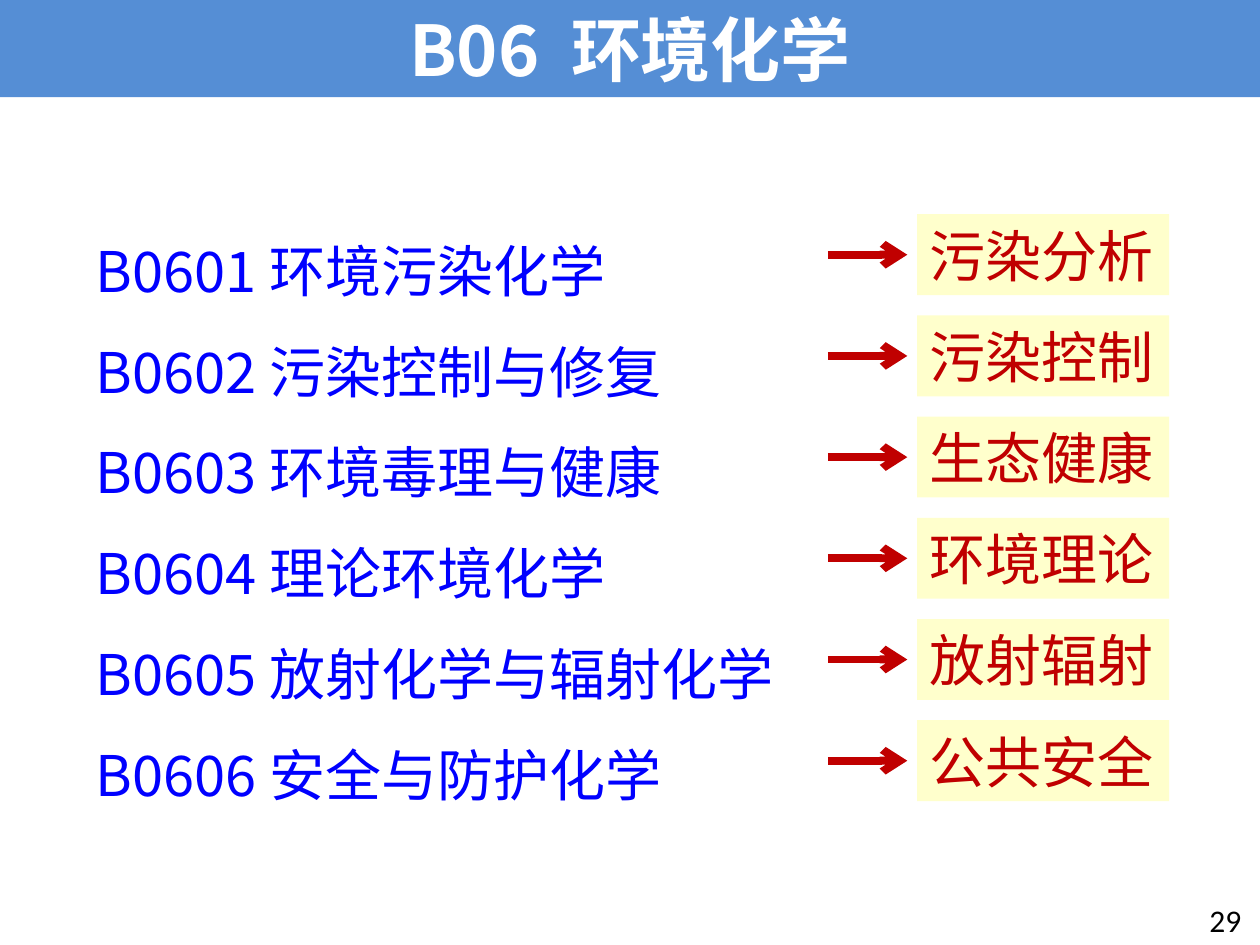
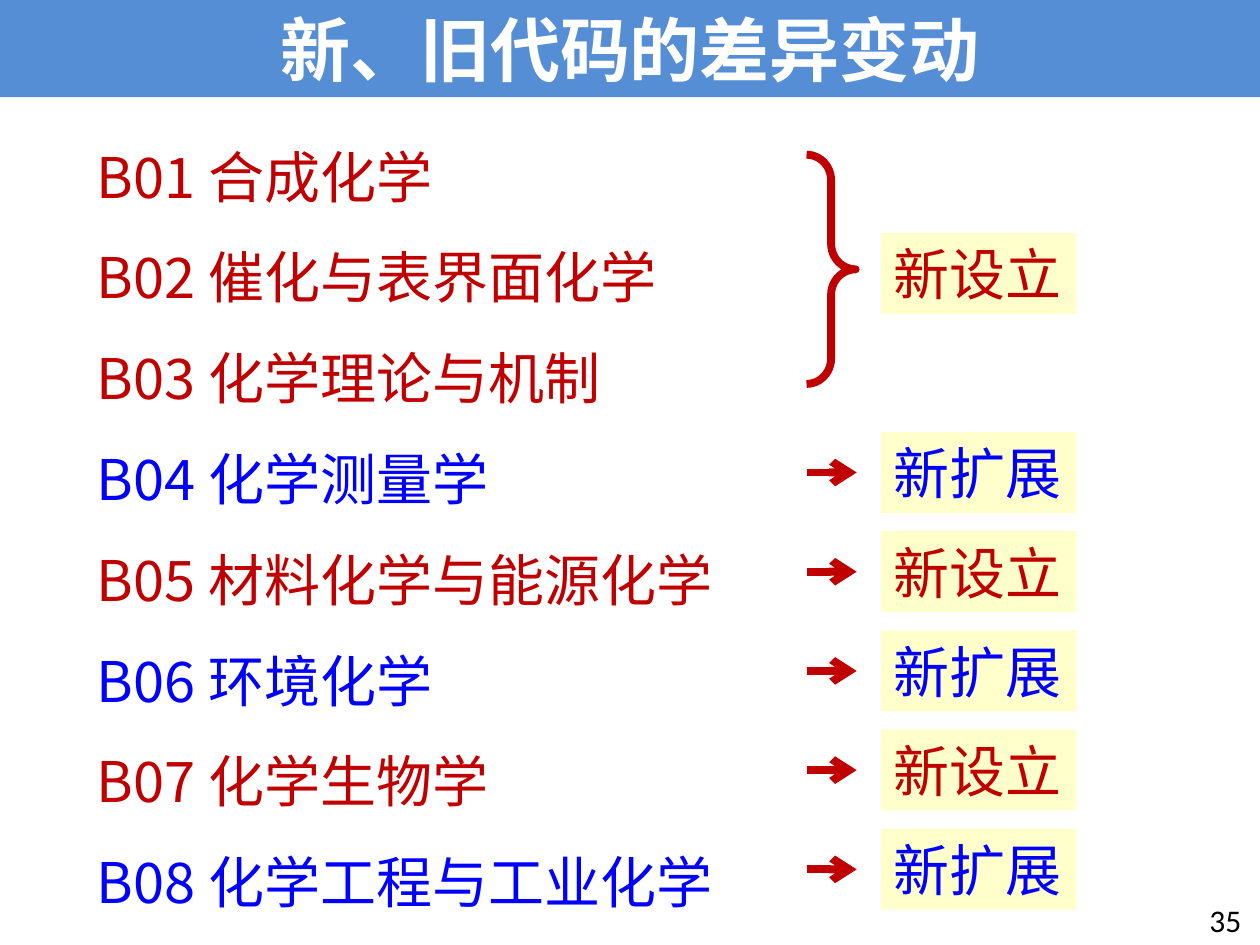
from dataclasses import dataclass

from lxml import etree
from pptx import Presentation
from pptx.dml.color import RGBColor
from pptx.enum.shapes import MSO_CONNECTOR, MSO_SHAPE
from pptx.enum.text import MSO_ANCHOR, MSO_AUTO_SIZE, PP_ALIGN
from pptx.oxml.ns import qn
from pptx.util import Cm, Pt

RECTANGLE = MSO_SHAPE.RECTANGLE
RIGHT_BRACE = MSO_SHAPE.RIGHT_BRACE
STRAIGHT = MSO_CONNECTOR.STRAIGHT
TOP, MIDDLE = MSO_ANCHOR.TOP, MSO_ANCHOR.MIDDLE
LEFT, CENTER = PP_ALIGN.LEFT, PP_ALIGN.CENTER
FIXED = MSO_AUTO_SIZE.NONE

# Shared look
HAN_FONT, NUMBER_FONT = "Noto Sans CJK SC", "Calibri"
RED, BLUE, BAND_BLUE = "C00000", "0000FF", "558ED5"
CREAM, WHITE, BLACK = "FFFFCC", "FFFFFF", "000000"
SLIDE_WIDTH, SLIDE_HEIGHT = Cm(25.4), Cm(19.05)
BAND_HEIGHT = Cm(1.96)
TAG_HEIGHT = Cm(1.63)
STROKE = Pt(4.5)


@dataclass
class Entry:
    text: str
    color: str


@dataclass
class TagColumn:
    """Arrows that point at a column of equally spaced tags."""
    left: float
    width: float
    top: float
    pitch: float
    arrow_start: float
    arrow_end: float


@dataclass
class CodeList:
    left: float
    top: float
    width: float
    height: float
    indent: float
    entries: list[Entry]


def rgb(color: str) -> RGBColor:
    return RGBColor.from_string(color)


def format_paragraph(paragraph, size: float, color: str, font: str = HAN_FONT,
                     bold: bool = False, align=LEFT) -> None:
    paragraph.alignment = align
    for run in paragraph.runs:
        run.font.size = Pt(size)
        run.font.bold = bold
        run.font.color.rgb = rgb(color)
        run.font.name = font
        etree.SubElement(run.font._element, qn("a:ea"), typeface=font)


def place(shape, left: int, top: int, width: int, height: int) -> None:
    shape.left, shape.top = left, top
    shape.width, shape.height = width, height


def add_base_slide(prs, title: str, number: str):
    """Slide with the title band and the page number."""
    slide = prs.slides.add_slide(prs.slide_layouts[1])
    band = slide.shapes.title
    place(band, 0, 0, SLIDE_WIDTH, BAND_HEIGHT)
    band.fill.solid()
    band.fill.fore_color.rgb = rgb(BAND_BLUE)
    band.text_frame.text = title
    band.text_frame.auto_size = FIXED
    band.text_frame.vertical_anchor = MIDDLE
    format_paragraph(band.text_frame.paragraphs[0], 40, WHITE, bold=True, align=CENTER)

    page = slide.shapes.add_textbox(Cm(24.13), Cm(18.03), Cm(1.27), Cm(1.02))
    page.text_frame.text = number
    page.text_frame.word_wrap = False
    format_paragraph(page.text_frame.paragraphs[0], 18, BLACK, NUMBER_FONT)
    return slide


def fill_code_list(slide, codes: CodeList) -> None:
    body = slide.placeholders[1]
    place(body, Cm(codes.left), Cm(codes.top), Cm(codes.width), Cm(codes.height))
    frame = body.text_frame
    frame.text = "\n".join(entry.text for entry in codes.entries)
    frame.auto_size = FIXED
    frame.vertical_anchor = TOP
    for paragraph, entry in zip(frame.paragraphs, codes.entries):
        paragraph.line_spacing = 1.5
        paragraph.space_before = Pt(0)
        properties = paragraph._p.get_or_add_pPr()
        properties.set("marL", str(Cm(codes.indent)))
        properties.set("indent", "0")
        etree.SubElement(properties, qn("a:buNone"))
        format_paragraph(paragraph, 32, entry.color)


def add_tag(shapes, entry: Entry, left: float, top: float, width: float) -> None:
    tag = shapes.add_shape(RECTANGLE, Cm(left), Cm(top), Cm(width), TAG_HEIGHT)
    tag.shadow.inherit = False
    tag.fill.solid()
    tag.fill.fore_color.rgb = rgb(CREAM)
    tag.line.fill.background()
    tag.text_frame.text = entry.text
    tag.text_frame.word_wrap = False
    tag.text_frame.vertical_anchor = MIDDLE
    format_paragraph(tag.text_frame.paragraphs[0], 32, entry.color)


def add_arrow(shapes, start: float, end: float, top: float) -> None:
    middle = Cm(top) + TAG_HEIGHT // 2
    arrow = shapes.add_connector(STRAIGHT, Cm(start), middle, Cm(end), middle)
    arrow.line.color.rgb = rgb(RED)
    arrow.line.width = STROKE
    etree.SubElement(arrow.line._get_or_add_ln(), qn("a:tailEnd"), type="arrow")
    etree.SubElement(arrow._element.spPr, qn("a:effectLst"))


def add_tag_column(slide, column: TagColumn, tags: list[Entry]) -> None:
    for row, entry in enumerate(tags):
        top = column.top + row * column.pitch
        pair = slide.shapes.add_group_shape().shapes
        add_tag(pair, entry, column.left, top, column.width)
        add_arrow(pair, column.arrow_start, column.arrow_end, top)


def add_brace(shapes) -> None:
    brace = shapes.add_shape(RIGHT_BRACE, Cm(16.26), Cm(3.12), Cm(0.99), Cm(4.62))
    brace.adjustments[0] = 0.52
    brace.adjustments[1] = 0.5
    brace.shadow.inherit = False
    brace.fill.background()
    brace.line.color.rgb = rgb(RED)
    brace.line.width = STROKE


def build_environment(prs) -> None:
    slide = add_base_slide(prs, "B06  环境化学", "29")
    directions = [
        ("B0601 环境污染化学", "污染分析"),
        ("B0602 污染控制与修复", "污染控制"),
        ("B0603 环境毒理与健康", "生态健康"),
        ("B0604 理论环境化学", "环境理论"),
        ("B0605 放射化学与辐射化学", "放射辐射"),
        ("B0606 安全与防护化学", "公共安全"),
    ]
    codes = [Entry(code, BLUE) for code, _ in directions]
    fill_code_list(slide, CodeList(1.3, 3.96, 15.19, 12.57, 0.38, codes))
    column = TagColumn(left=18.49, width=5.08, top=4.32, pitch=2.04,
                       arrow_start=16.69, arrow_end=18.29)
    add_tag_column(slide, column, [Entry(topic, RED) for _, topic in directions])


def build_code_changes(prs) -> None:
    slide = add_base_slide(prs, "新、旧代码的差异变动", "35")
    founded, extended = Entry("新设立", RED), Entry("新扩展", BLUE)
    changes = [
        ("B01 合成化学", founded),
        ("B02 催化与表界面化学", founded),
        ("B03 化学理论与机制", founded),
        ("B04 化学测量学", extended),
        ("B05 材料化学与能源化学", founded),
        ("B06 环境化学", extended),
        ("B07 化学生物学", founded),
        ("B08 化学工程与工业化学", extended),
    ]
    codes = [Entry(code, change.color) for code, change in changes]
    fill_code_list(slide, CodeList(1.7, 2.06, 15.39, 16.66, 0, codes))

    # The first three codes share one braced tag
    column = TagColumn(left=17.76, width=3.94, top=8.71, pitch=2.0,
                       arrow_start=16.26, arrow_end=17.27)
    braced = slide.shapes.add_group_shape().shapes
    add_tag(braced, founded, column.left, 4.7, column.width)
    add_brace(braced)
    add_tag_column(slide, column, [change for _, change in changes[3:]])


def main() -> None:
    prs = Presentation()
    prs.slide_width, prs.slide_height = SLIDE_WIDTH, SLIDE_HEIGHT
    build_environment(prs)
    build_code_changes(prs)
    prs.save("out.pptx")


if __name__ == "__main__":
    main()
